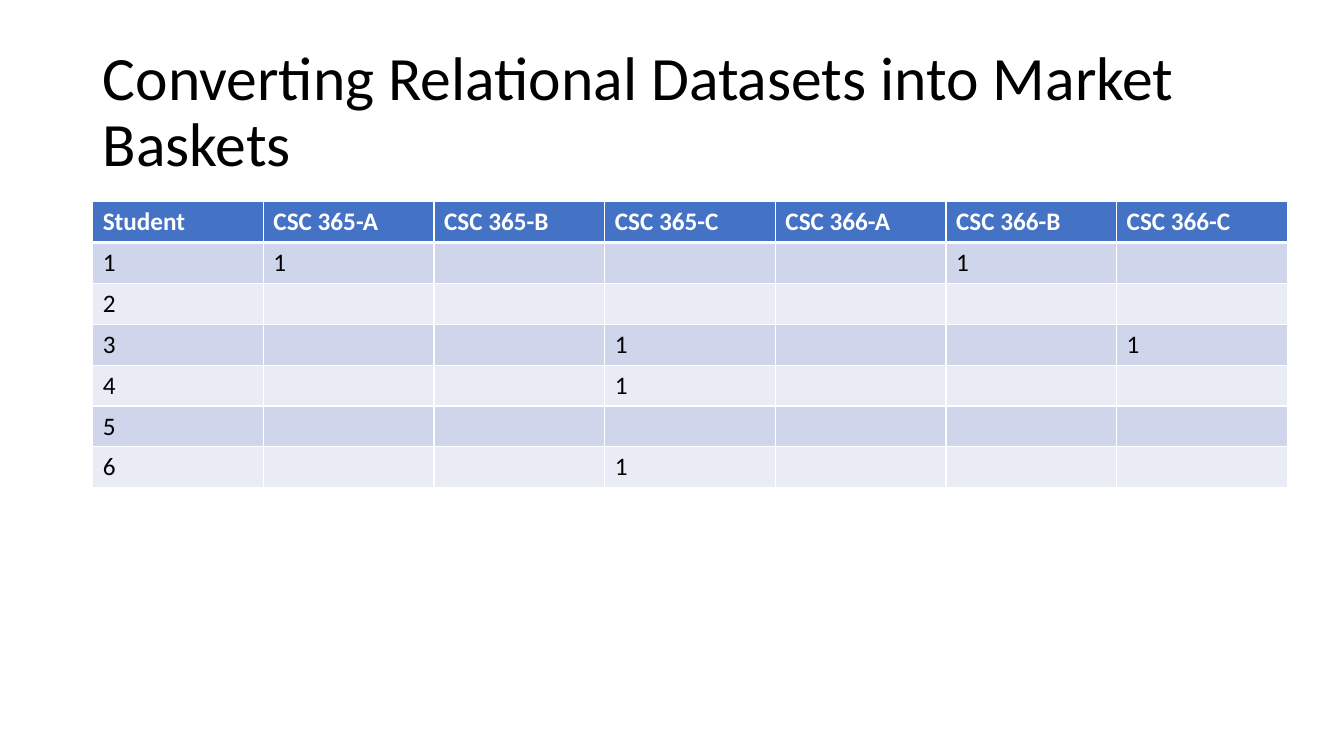
from dataclasses import dataclass

from lxml.etree import SubElement
from pptx import Presentation
from pptx.dml.color import RGBColor
from pptx.enum.text import MSO_ANCHOR, MSO_AUTO_SIZE, PP_ALIGN
from pptx.oxml.ns import qn
from pptx.util import Inches, Pt


@dataclass(frozen=True)
class Theme:
    font: str = "Calibri"
    title_size: int = 44
    table_size: int = 18
    text: str = "000000"
    header_text: str = "FFFFFF"
    header_fill: str = "4472C4"
    band_fills: tuple = ("CFD5EA", "E9EBF5")
    border: str = "FFFFFF"
    thin: int = 1
    thick: int = 3


THEME = Theme()
TITLE = "Converting Relational Datasets into Market Baskets"
TITLE_BOX = (0.92, 0.4, 11.5, 1.45)
TABLE_BOX = (0.92, 2, 11.85, 2.84)
SECTIONS = [f"CSC {course}-{section}" for course in (365, 366) for section in "ABC"]
ENROLLMENTS = {
    1: {"CSC 365-A", "CSC 366-B"},
    2: set(),
    3: {"CSC 365-C", "CSC 366-C"},
    4: {"CSC 365-C"},
    5: set(),
    6: {"CSC 365-C"},
}


def style_paragraph(paragraph, size, color, bold=False):
    font = paragraph.font
    font.name, font.size, font.bold = THEME.font, Pt(size), bold
    font.color.rgb = RGBColor.from_string(color)


def add_title(slide, box, text):
    title = slide.shapes.title
    title.left, title.top, title.width, title.height = map(Inches, box)
    frame = title.text_frame
    frame.text = text
    frame.word_wrap = True
    frame.auto_size = MSO_AUTO_SIZE.NONE
    frame.vertical_anchor = MSO_ANCHOR.MIDDLE
    paragraph = frame.paragraphs[0]
    paragraph.alignment = PP_ALIGN.LEFT
    paragraph.line_spacing = 0.9
    style_paragraph(paragraph, THEME.title_size, THEME.text)


def set_borders(cell, row):
    """Draw thin borders, with a thick rule between header and body."""
    widths = {"lnL": THEME.thin, "lnR": THEME.thin,
              "lnT": THEME.thick if row == 1 else THEME.thin,
              "lnB": THEME.thick if row == 0 else THEME.thin}
    properties = cell._tc.get_or_add_tcPr()
    for side, width in widths.items():
        line = SubElement(properties, qn(f"a:{side}"), w=str(Pt(width)))
        fill = SubElement(line, qn("a:solidFill"))
        SubElement(fill, qn("a:srgbClr"), val=THEME.border)


def fill_cell(cell, row, text):
    header = row == 0
    set_borders(cell, row)
    cell.fill.solid()
    color = THEME.header_fill if header else THEME.band_fills[(row - 1) % 2]
    cell.fill.fore_color.rgb = RGBColor.from_string(color)
    cell.text = text
    style_paragraph(cell.text_frame.paragraphs[0], THEME.table_size,
                    THEME.header_text if header else THEME.text, header)


def add_basket_table(slide, box, sections, enrollments):
    """Show one row per student, with a 1 under each section taken."""
    rows = [["Student", *sections]]
    for student, taken in enrollments.items():
        rows.append([str(student), *("1" if section in taken else "" for section in sections)])
    table = slide.shapes.add_table(len(rows), len(rows[0]), *map(Inches, box)).table
    for row, values in enumerate(rows):
        for column, text in enumerate(values):
            fill_cell(table.cell(row, column), row, text)


def main():
    presentation = Presentation()
    presentation.slide_width, presentation.slide_height = Inches(13.33), Inches(7.5)
    slide = presentation.slides.add_slide(presentation.slide_layouts.get_by_name("Title Only"))
    add_title(slide, TITLE_BOX, TITLE)
    add_basket_table(slide, TABLE_BOX, SECTIONS, ENROLLMENTS)
    presentation.save("out.pptx")


if __name__ == "__main__":
    main()
